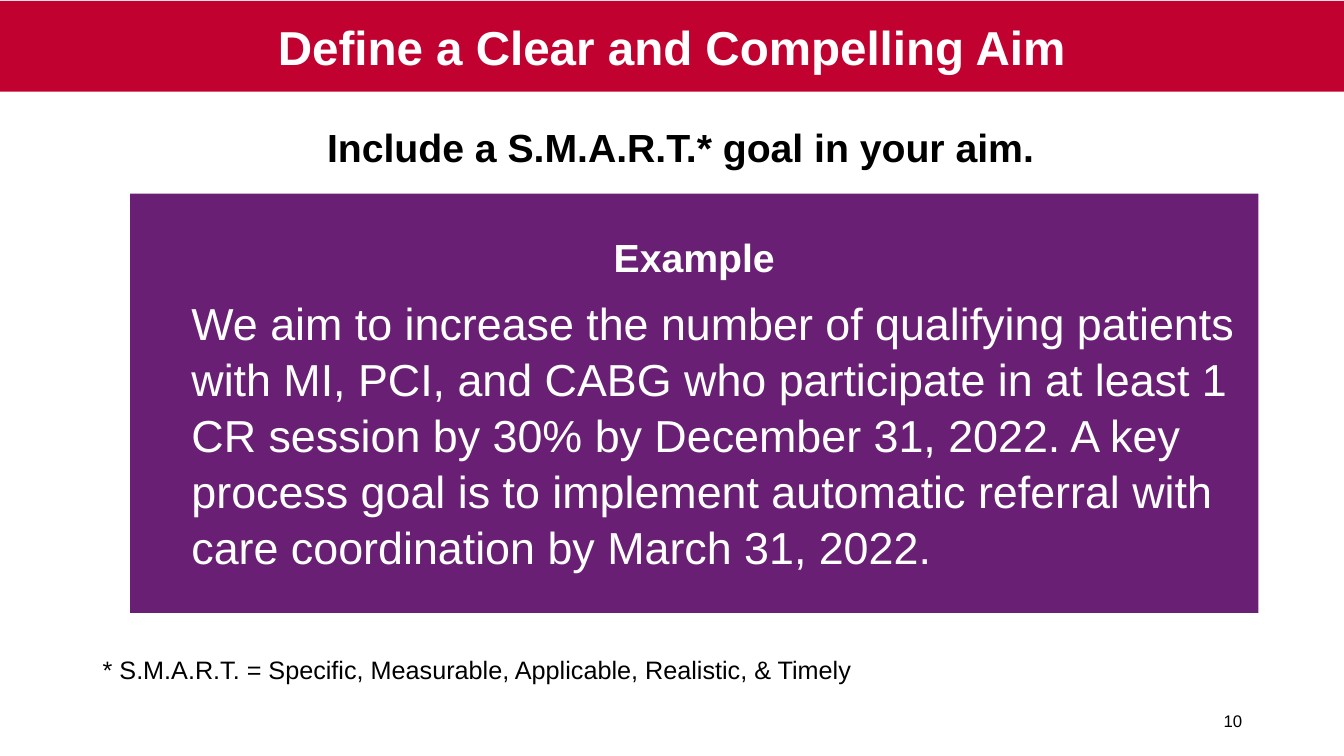
from pptx import Presentation
from pptx.dml.color import RGBColor
from pptx.enum.shapes import MSO_SHAPE
from pptx.enum.text import MSO_ANCHOR, MSO_AUTO_SIZE, PP_ALIGN
from pptx.util import Inches, Pt

COLORS = {"red": "C10230", "purple": "691F74", "white": "FFFFFF", "black": "000000"}
AIM = (
    "We aim to increase the number of qualifying patients with MI, PCI, and CABG "
    "who participate in at least 1 CR session by 30% by December 31, 2022. "
    "A key process goal is to implement automatic referral with care coordination "
    "by March 31, 2022."
)


def color(name):
    """Return the named palette colour."""
    return RGBColor.from_string(COLORS[name])


def apply_format(target, values):
    """Set each attribute of the target from a dict."""
    for name, value in values.items():
        setattr(target, name, value)


def place(shape, box):
    """Move a shape to a box of left, top, width and height in inches."""
    names = ("left", "top", "width", "height")
    apply_format(shape, {name: Inches(value) for name, value in zip(names, box)})


def fill_shape(shape, name):
    """Give a shape a solid fill and no outline."""
    shape.fill.solid()
    shape.fill.fore_color.rgb = color(name)
    shape.line.fill.background()


def set_frame(shape, anchor):
    """Set wrapping, standard insets and anchor of a shape's text."""
    frame = shape.text_frame
    apply_format(frame, {
        "word_wrap": True, "auto_size": MSO_AUTO_SIZE.NONE, "vertical_anchor": anchor,
        "margin_left": Inches(0.1), "margin_right": Inches(0.1),
        "margin_top": Inches(0.05), "margin_bottom": Inches(0.05),
    })
    return frame


def write(para, text, size, ink, bold=False, **layout):
    """Write one formatted span into a paragraph."""
    apply_format(para, {"alignment": PP_ALIGN.LEFT, "space_before": Pt(0), **layout})
    span = para.add_run()
    span.text = text
    apply_format(span.font, {"name": "Arial", "size": Pt(size), "bold": bold})
    span.font.color.rgb = color(ink)


def add_title(slide, box, text):
    """Format the title placeholder as a red banner."""
    title = slide.shapes.title
    place(title, box)
    fill_shape(title, "red")
    para = set_frame(title, MSO_ANCHOR.MIDDLE).paragraphs[0]
    write(para, text, 34, "white", True, alignment=PP_ALIGN.CENTER)


def add_label(slide, box, text, size, anchor, bold=False, **layout):
    """Add a text box with one black line."""
    label = slide.shapes.add_textbox(0, 0, 0, 0)
    place(label, box)
    para = set_frame(label, anchor).paragraphs[0]
    write(para, text, size, "black", bold, **layout)


def add_example(slide, box, heading, text):
    """Add the purple panel with its heading and indented example."""
    panel = slide.shapes.add_shape(MSO_SHAPE.RECTANGLE, 0, 0, 0, 0)
    place(panel, box)
    panel.shadow.inherit = False
    fill_shape(panel, "purple")
    frame = set_frame(panel, MSO_ANCHOR.MIDDLE)
    write(frame.paragraphs[0], heading, 28, "white", True,
          alignment=PP_ALIGN.CENTER, space_before=Pt(10))
    para = frame.add_paragraph()
    para._p.get_or_add_pPr().set("marL", str(Inches(0.51)))
    write(para, text, 32, "white", space_before=Pt(10), line_spacing=1.04)


def main():
    """Build and save the slide."""
    deck = Presentation()
    apply_format(deck, {"slide_width": Inches(13.33), "slide_height": Inches(7.5)})
    slide = deck.slides.add_slide(deck.slide_layouts[5])
    add_title(slide, (0, 0.01, 13.33, 0.9), "Define a Clear and Compelling Aim")
    add_label(slide, (1.41, 1.07, 10.68, 0.67), "Include a S.M.A.R.T.* goal in your aim.",
              28, MSO_ANCHOR.BOTTOM, True, alignment=PP_ALIGN.CENTER, space_before=Pt(10))
    add_example(slide, (1.29, 1.92, 11.19, 4.16), "Example", AIM)
    add_label(slide, (0.92, 6.44, 11.56, 0.56),
              "* S.M.A.R.T. = Specific, Measurable, Applicable, Realistic, & Timely",
              18, MSO_ANCHOR.TOP, space_before=Pt(10))
    add_label(slide, (9.42, 6.95, 3, 0.4), "10", 12, MSO_ANCHOR.MIDDLE,
              alignment=PP_ALIGN.RIGHT)
    deck.save("out.pptx")


if __name__ == "__main__":
    main()
